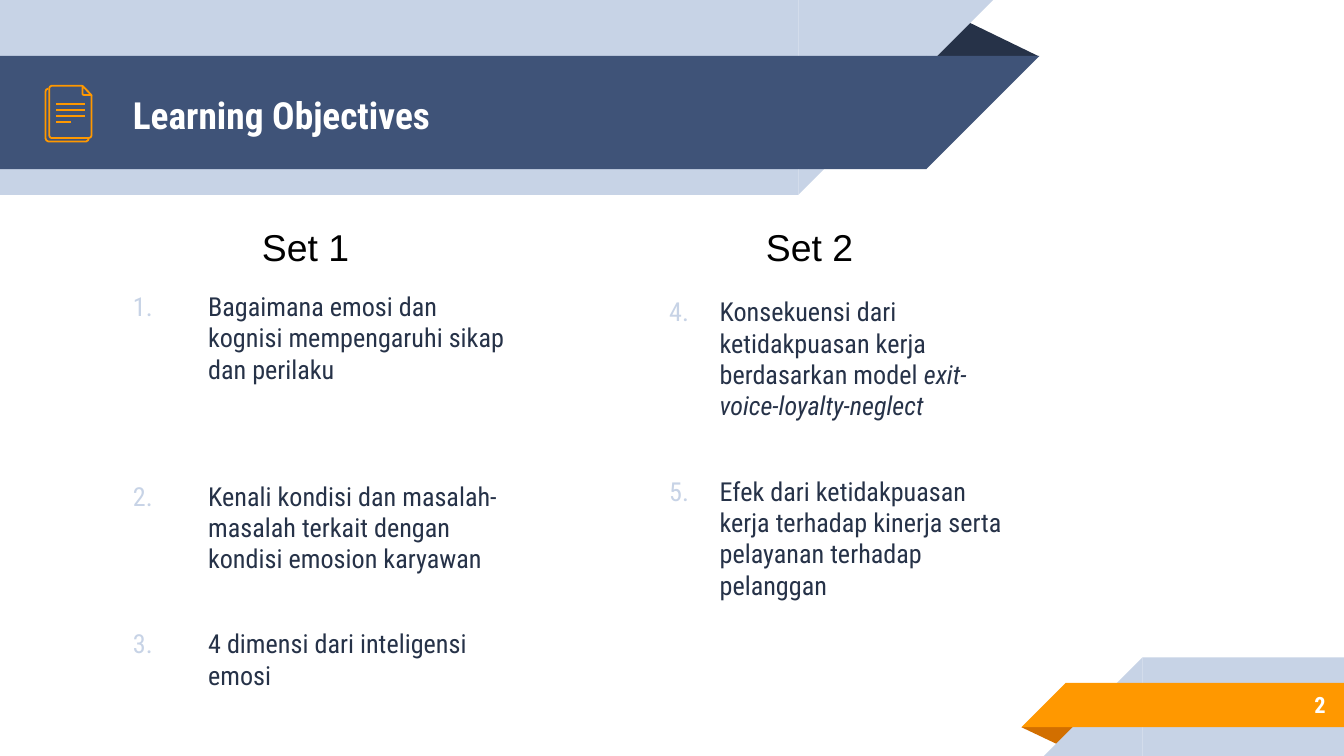
"""Build the Learning Objectives slide with two numbered sets."""
from lxml.etree import SubElement
from pptx import Presentation
from pptx.dml.color import RGBColor
from pptx.enum.shapes import MSO_CONNECTOR, MSO_SHAPE
from pptx.enum.text import MSO_ANCHOR, PP_ALIGN
from pptx.oxml.ns import qn
from pptx.util import Pt

PALE = RGBColor(0xC7, 0xD3, 0xE6)
BLUE = RGBColor(0x3F, 0x53, 0x78)
NAVY = RGBColor(0x26, 0x32, 0x48)
ORANGE = RGBColor(0xFF, 0x98, 0x00)
RUST = RGBColor(0xD2, 0x6F, 0x00)
WHITE = RGBColor(0xFF, 0xFF, 0xFF)
BLACK = RGBColor(0, 0, 0)
FONT = "Roboto Condensed"

deck = Presentation()
deck.slide_width, deck.slide_height = Pt(720), Pt(405)
slide = deck.slides.add_slide(deck.slide_layouts[6])
shapes = slide.shapes


def add_box(left, top, width, height, inset=7.2):
    box = shapes.add_textbox(Pt(left), Pt(top), Pt(width), Pt(height))
    frame = box.text_frame
    frame.word_wrap = True
    frame.margin_top = frame.margin_bottom = Pt(inset)
    return frame


def style(para, size, color, name=FONT, bold=False):
    for run in para.runs:
        font = run.font
        font.size, font.name, font.bold = Pt(size), name, bold
        font.color.rgb = color


RECT, WEDGE, FOLD = MSO_SHAPE.RECTANGLE, MSO_SHAPE.RIGHT_TRIANGLE, MSO_SHAPE.ISOSCELES_TRIANGLE
bands = [
    (FOLD, 495.4, 10, 61.2, 20.2, 0, NAVY),
    (RECT, 0, 0, 427.7, 104.4, 0, PALE),
    (WEDGE, 427.7, 0, 104.4, 104.4, 90, PALE),
    (RECT, 0, 30, 496.2, 60.6, 0, BLUE),
    (WEDGE, 496.2, 30, 60.6, 60.6, 90, BLUE),
    (FOLD, 547.2, 389.6, 31, 10, 180, RUST),
    (RECT, 612, 352.2, 108, 52.8, 0, PALE),
    (WEDGE, 559.2, 352.2, 52.8, 52.8, 270, PALE),
    (RECT, 571, 365.8, 149, 23.8, 0, ORANGE),
    (WEDGE, 547.2, 365.8, 23.8, 23.8, 270, ORANGE),
]
for kind, left, top, width, height, turn, color in bands:
    band = shapes.add_shape(kind, Pt(left), Pt(top), Pt(width), Pt(height))
    if kind == FOLD:
        band.adjustments[0] = 0.32
    band.rotation = turn
    band.shadow.inherit = False
    band.fill.solid()
    band.fill.fore_color.rgb = color
    band.line.fill.background()

title = add_box(64.1, 31, 414, 60.5)
title.vertical_anchor = MSO_ANCHOR.MIDDLE
title.text = "Learning Objectives"
style(title.paragraphs[0], 20, WHITE, bold=True)

sets = [
    (64.1, 148.3, 216.7, 203, 40.3, 1, [
        ("Bagaimana emosi dan kognisi mempengaruhi sikap dan perilaku", "", 6),
        ("Kenali kondisi dan masalah-masalah terkait dengan kondisi emosion karyawan", "", 51.2),
        ("4 dimensi dari inteligensi emosi", "", 28.8)]),
    (351.4, 151.2, 193.7, 193, 27, 4, [
        ("Konsekuensi dari ketidakpuasan kerja berdasarkan model ", "exit-voice-loyalty-neglect", 6),
        ("Efek dari ketidakpuasan kerja terhadap kinerja serta pelayanan terhadap pelanggan", "", 28.8)]),
]
for left, top, width, height, indent, start, goals in sets:
    body = add_box(left, top, width, height)
    for spot, (goal, term, gap) in enumerate(goals):
        para = body.add_paragraph() if spot else body.paragraphs[0]
        para.text = goal
        if term:
            run = para.add_run()
            run.text = term
            run.font.italic = True
        style(para, 14, NAVY)
        para.space_before = Pt(gap)
        props = para._p.get_or_add_pPr()
        props.set("marL", str(Pt(indent)))
        props.set("indent", str(-Pt(indent)))
        tint = SubElement(props, qn("a:buClr"))
        SubElement(tint, qn("a:srgbClr"), val=str(PALE))
        SubElement(props, qn("a:buAutoNum"), type="arabicPeriod", startAt=str(start))

page = add_box(599.8, 365, 117.4, 25.2)
page.vertical_anchor = MSO_ANCHOR.MIDDLE
page.text = "2"
page.paragraphs[0].alignment = PP_ALIGN.RIGHT
style(page.paragraphs[0], 12, WHITE, bold=True)

sheets = [
    ([(47.5, 74.2), (47.2, 75.2), (46.2, 75.8), (25.8, 75.8), (24.8, 75.2),
      (24.4, 74.2), (24.4, 48.9), (24.8, 48), (25.8, 47.5)], False),
    ([(49, 50.9), (49, 72.7), (48.6, 73.6), (47.6, 74), (27.6, 74), (26.8, 73.6),
      (26.4, 72.7), (26.4, 47.3), (26.8, 46.4), (27.6, 46), (44.2, 46)], False),
    ([(44.2, 50.2), (44.2, 46), (49, 50.9), (45, 50.9), (44.4, 50.7)], True),
]
for points, closed in sheets:
    spots = [(Pt(x), Pt(y)) for x, y in points]
    pen = shapes.build_freeform(*spots[0], scale=1)
    pen.add_line_segments(spots[1:], close=closed)
    sheet = pen.convert_to_shape()
    sheet.shadow.inherit = False
    sheet.fill.background()
    sheet.line.color.rgb = ORANGE
    sheet.line.width = Pt(0.96)

for row, right in enumerate([45.5, 45.5, 45.5, 38.3]):
    y = Pt(55.9 + 3.2 * row)
    rule = shapes.add_connector(MSO_CONNECTOR.STRAIGHT, Pt(right), y, Pt(30), y)
    rule.line.color.rgb = ORANGE
    rule.line.width = Pt(0.96)
    SubElement(rule._element.spPr, qn("a:effectLst"))

for left, name in [(133.2, "Set 1"), (403.2, "Set 2")]:
    head = add_box(left, 116.6, 62, 31.5, 3.6)
    head.word_wrap = False
    head.text = name
    style(head.paragraphs[0], 20, BLACK, "Arial")

deck.save("out.pptx")
